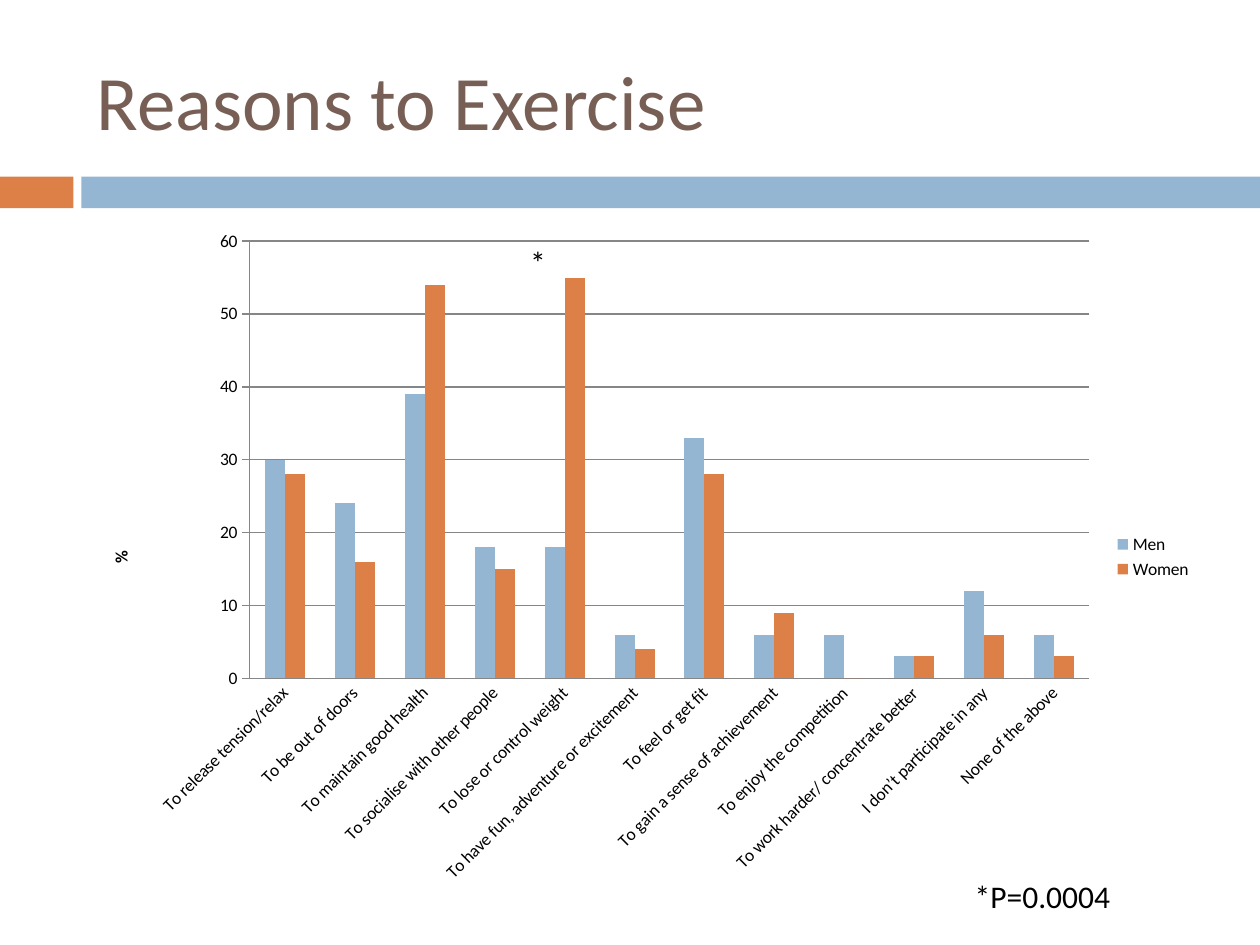
from pptx import Presentation
from pptx.chart.data import CategoryChartData
from pptx.dml.color import RGBColor
from pptx.enum.chart import XL_CHART_TYPE, XL_LEGEND_POSITION, XL_TICK_MARK
from pptx.enum.shapes import MSO_SHAPE
from pptx.enum.text import MSO_ANCHOR, MSO_AUTO_SIZE
from pptx.util import Cm, Pt

RECTANGLE = MSO_SHAPE.RECTANGLE
COLUMNS = XL_CHART_TYPE.COLUMN_CLUSTERED
LEGEND_RIGHT = XL_LEGEND_POSITION.RIGHT
TICK_NONE, TICK_OUTSIDE = XL_TICK_MARK.NONE, XL_TICK_MARK.OUTSIDE
TOP, MIDDLE = MSO_ANCHOR.TOP, MSO_ANCHOR.MIDDLE
GROW = MSO_AUTO_SIZE.SHAPE_TO_FIT_TEXT

FONT = "Calibri"
COLORS = {
    "title": "775F55",
    "orange": "DD8047",
    "blue": "94B6D2",
    "text": "000000",
    "line": "868686",
}

# Reason, men (%), women (%)
REASONS = [
    ("To release tension/relax", 30, 28),
    ("To be out of doors", 24, 16),
    ("To maintain good health", 39, 54),
    ("To socialise with other people", 18, 15),
    ("To lose or control weight", 18, 55),
    ("To have fun, adventure or excitement", 6, 4),
    ("To feel or get fit", 33, 28),
    ("To gain a sense of achievement", 6, 9),
    ("To enjoy the competition", 6, 0),
    ("To work harder/ concentrate better", 3, 3),
    ("I don’t participate in any", 12, 6),
    ("None of the above", 6, 3),
]


def color(name):
    return RGBColor.from_string(COLORS[name])


def add_text(slide, box, text, size, color_name, wrap, anchor):
    shape = slide.shapes.add_textbox(*map(Cm, box))
    frame = shape.text_frame
    frame.word_wrap = wrap
    frame.vertical_anchor = anchor
    if not wrap:
        frame.auto_size = GROW
    paragraph = frame.paragraphs[0]
    paragraph.text = text
    paragraph.font.name = FONT
    paragraph.font.size = Pt(size)
    paragraph.font.color.rgb = color(color_name)


def add_band(slide, box):
    """Short orange block, a gap, then a blue bar filling the rest."""
    left, top, width, height = box
    block, gap = 1.48, 0.16
    bar_left = left + block + gap
    parts = [
        (left, block, "orange"),
        (bar_left, left + width - bar_left, "blue"),
    ]
    for part_left, part_width, fill in parts:
        shape = slide.shapes.add_shape(
            RECTANGLE, Cm(part_left), Cm(top), Cm(part_width), Cm(height))
        shape.shadow.inherit = False
        shape.fill.solid()
        shape.fill.fore_color.rgb = color(fill)
        shape.line.fill.background()


def add_reasons_chart(slide, box):
    left, top, width, height = box
    names, men, women = zip(*REASONS)
    data = CategoryChartData()
    data.categories = names
    data.add_series("Men", men)
    data.add_series("Women ", women)
    chart = slide.shapes.add_chart(COLUMNS, *map(Cm, box), data).chart
    chart.has_title = False
    chart.font.name = FONT
    chart.font.size = Pt(10)
    chart.font.color.rgb = color("text")

    # Columns
    plot = chart.plots[0]
    plot.gap_width = 150
    plot.overlap = 0
    plot.vary_by_categories = False
    for series, fill in zip(plot.series, ("blue", "orange")):
        series.format.fill.solid()
        series.format.fill.fore_color.rgb = color(fill)

    # Axes
    value_axis, category_axis = chart.value_axis, chart.category_axis
    value_axis.minimum_scale, value_axis.maximum_scale = 0, 60
    value_axis.major_unit = 10
    value_axis.major_tick_mark = TICK_OUTSIDE
    category_axis.major_tick_mark = TICK_NONE
    value_axis.has_major_gridlines = True
    for part in (value_axis, category_axis, value_axis.major_gridlines):
        part.format.line.color.rgb = color("line")
        part.format.line.width = Pt(0.75)
    value_axis.has_title = True
    paragraph = value_axis.axis_title.text_frame.paragraphs[0]
    paragraph.text = "%"
    paragraph.font.name = FONT
    paragraph.font.size = Pt(10)
    paragraph.font.bold = True
    paragraph.font.color.rgb = color("text")

    # Legend
    chart.has_legend = True
    chart.legend.position = LEGEND_RIGHT
    chart.legend.include_in_layout = False

    # Significance mark and its note
    marks = [((8.74, 0.38, 0.79, 1.02), "*"),
             ((17.7, 13.16, 3.45, 1.02), "*P=0.0004")]
    for (x, y, mark_width, mark_height), text in marks:
        add_text(slide, (left + x, top + y, mark_width, mark_height),
                 text, 18, "text", False, TOP)


def main():
    presentation = Presentation()
    presentation.slide_width = Cm(25.4)
    presentation.slide_height = Cm(19.05)
    slide = presentation.slides.add_slide(presentation.slide_layouts[6])

    add_band(slide, (0, 3.56, 25.4, 0.64))
    add_text(slide, (1.7, 0.64, 22.66, 2.74), "Reasons to Exercise",
             44, "title", True, MIDDLE)
    add_reasons_chart(slide, (1.7, 4.39, 22.66, 13.67))
    presentation.save("out.pptx")


if __name__ == "__main__":
    main()
